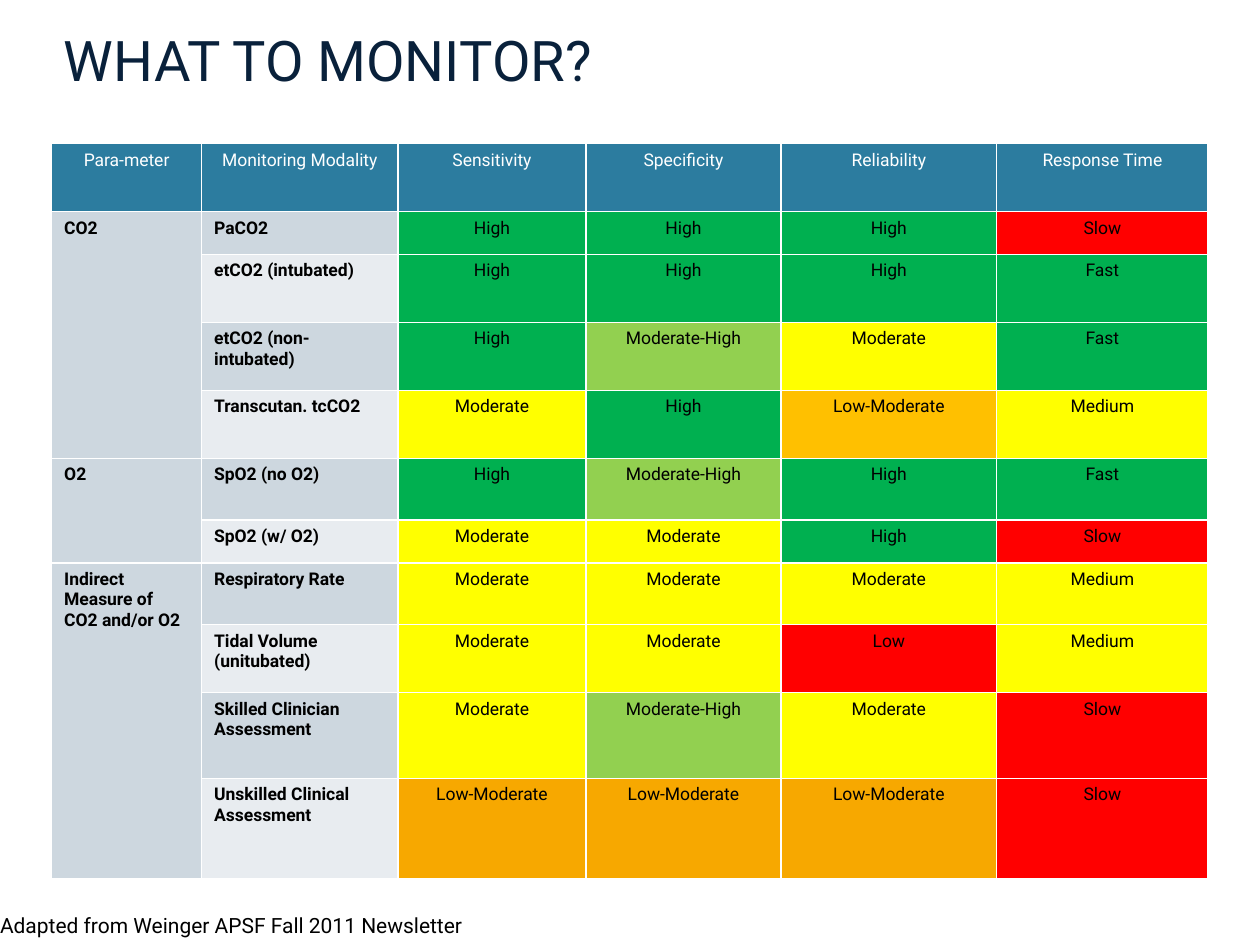
"""Build the slide that rates respiratory monitoring modalities in a table."""
from pptx import Presentation
from pptx.dml.color import RGBColor
from pptx.enum.text import PP_ALIGN as Align
from pptx.util import Inches, Pt


def color(value):
    return RGBColor.from_string(value)


def write(frame, text, size, ink, bold=False, align=Align.LEFT, spacing=None):
    para = frame.paragraphs[0]
    for name, value in {"alignment": align, "line_spacing": spacing}.items():
        setattr(para, name, value)
    span = para.add_run()
    span.text = text
    for name, value in {"name": "Roboto", "size": Pt(size), "bold": bold}.items():
        setattr(span.font, name, value)
    span.font.color.rgb = color(ink)


HEADER_FILL, BAND_FILLS = "2C7C9F", ["CDD7DF", "E8ECF0"]
RATING_FILLS = {
    "High": "00B050", "Fast": "00B050", "Moderate-High": "92D050",
    "Moderate": "FFFF00", "Medium": "FFFF00", "Low-Moderate": "F7A800",
    "Low": "FF0000", "Slow": "FF0000",
}
HEADERS = ["Para-meter", "Monitoring Modality", "Sensitivity", "Specificity",
           "Reliability", "Response Time"]
GROUPS = {
    "CO2": [
        ["PaCO2", "High", "High", "High", "Slow"],
        ["etCO2 (intubated)", "High", "High", "High", "Fast"],
        ["etCO2 (non-intubated)", "High", "Moderate-High", "Moderate", "Fast"],
        ["Transcutan. tcCO2", "Moderate", "High", "Low-Moderate", "Medium"],
    ],
    "O2": [
        ["SpO2 (no O2)", "High", "Moderate-High", "High", "Fast"],
        ["SpO2 (w/ O2)", "Moderate", "Moderate", "High", "Slow"],
    ],
    "Indirect Measure of CO2 and/or O2": [
        ["Respiratory Rate", "Moderate", "Moderate", "Moderate", "Medium"],
        ["Tidal Volume (unitubated)", "Moderate", "Moderate", "Low", "Medium"],
        ["Skilled Clinician Assessment", "Moderate", "Moderate-High", "Moderate", "Slow"],
        ["Unskilled Clinical Assessment", "Low-Moderate", "Low-Moderate", "Low-Moderate", "Slow"],
    ],
}
COLUMN_WIDTHS = [1.19, 1.56, 1.49, 1.55, 1.71, 1.68]
ROW_HEIGHTS = [0.54, 0.34, 0.54, 0.54, 0.54, 0.49, 0.34, 0.49, 0.54, 0.68, 0.8]

deck = Presentation()
deck.slide_width, deck.slide_height = Inches(10), Inches(7.5)
page = deck.slides.add_slide(deck.slide_layouts[6])

title = page.shapes.add_textbox(Inches(0.41), Inches(0.41), Inches(9.17), Inches(0.57))
title.text_frame.word_wrap = True
write(title.text_frame, "WHAT TO MONITOR?", 32, "09213B", spacing=Pt(20))

table = page.shapes.add_table(
    len(ROW_HEIGHTS), len(COLUMN_WIDTHS),
    Inches(0.41), Inches(1.14), Inches(9.17), Inches(5.86)).table
for column, width in zip(table.columns, COLUMN_WIDTHS):
    column.width = Inches(width)
for row, height in zip(table.rows, ROW_HEIGHTS):
    row.height = Inches(height)

entries = [(0, col, 1, text, HEADER_FILL) for col, text in enumerate(HEADERS)]
row_index = 1
for parameter, modalities in GROUPS.items():
    entries.append((row_index, 0, len(modalities), parameter, BAND_FILLS[0]))
    for modality, *ratings in modalities:
        entries.append((row_index, 1, 1, modality, BAND_FILLS[(row_index - 1) % 2]))
        for col, rating in enumerate(ratings, 2):
            entries.append((row_index, col, 1, rating, RATING_FILLS[rating]))
        row_index += 1

for row, col, height, text, fill in entries:
    cell = table.cell(row, col)
    if height > 1:
        cell.merge(table.cell(row + height - 1, col))
    cell.fill.solid()
    cell.fill.fore_color.rgb = color(fill)
    is_header, is_label = row == 0, row > 0 and col < 2
    write(cell.text_frame, text, 10, "FFFFFF" if is_header else "000000",
          bold=is_label, align=Align.LEFT if is_label else Align.CENTER)

transcutaneous_reliability = table.cell(4, 4)
transcutaneous_reliability.fill.fore_color.rgb = color("FFC000")

credit = page.shapes.add_textbox(Inches(0), Inches(7.18), Inches(5.78), Inches(0.21))
credit_format = {"word_wrap": True, "margin_left": 0, "margin_top": 0,
                 "margin_right": 0, "margin_bottom": 0}
for name, value in credit_format.items():
    setattr(credit.text_frame, name, value)
write(credit.text_frame, "Adapted from Weinger APSF Fall 2011 Newsletter", 12, "000000",
      spacing=Pt(19))

deck.save("out.pptx")
